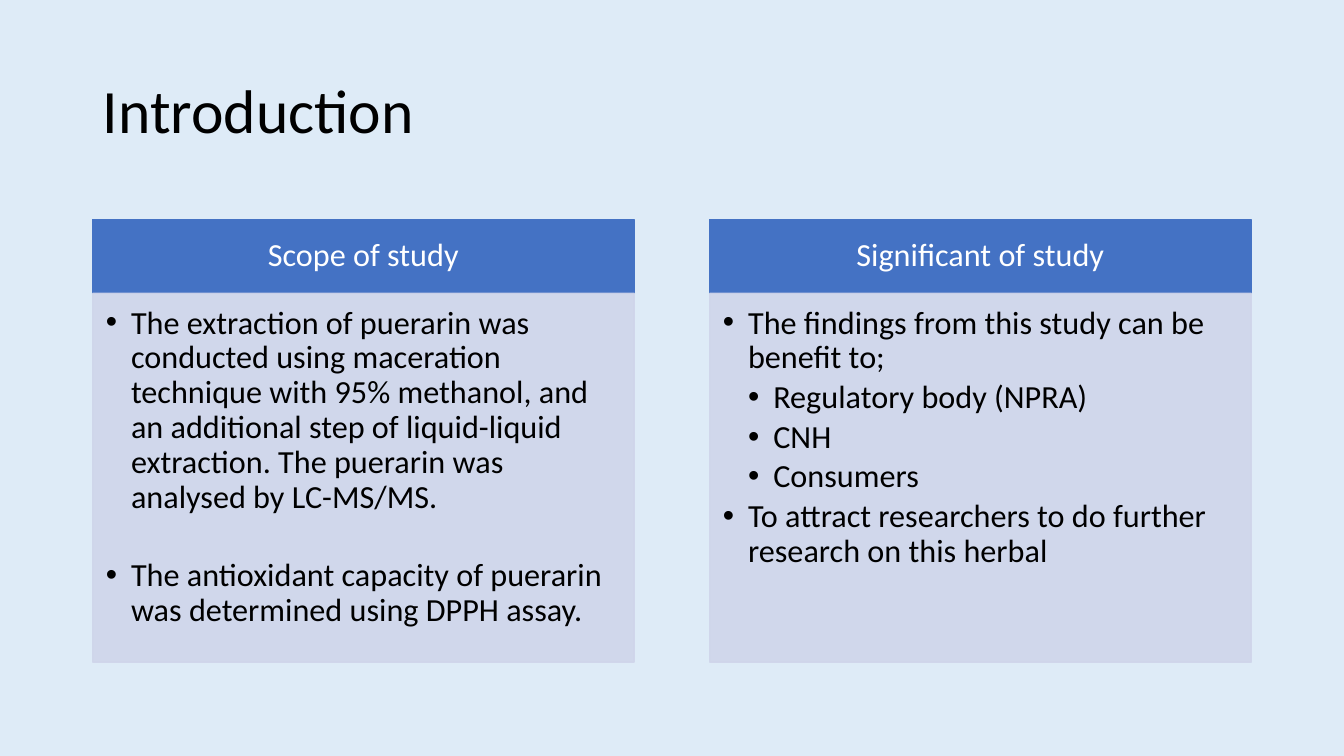
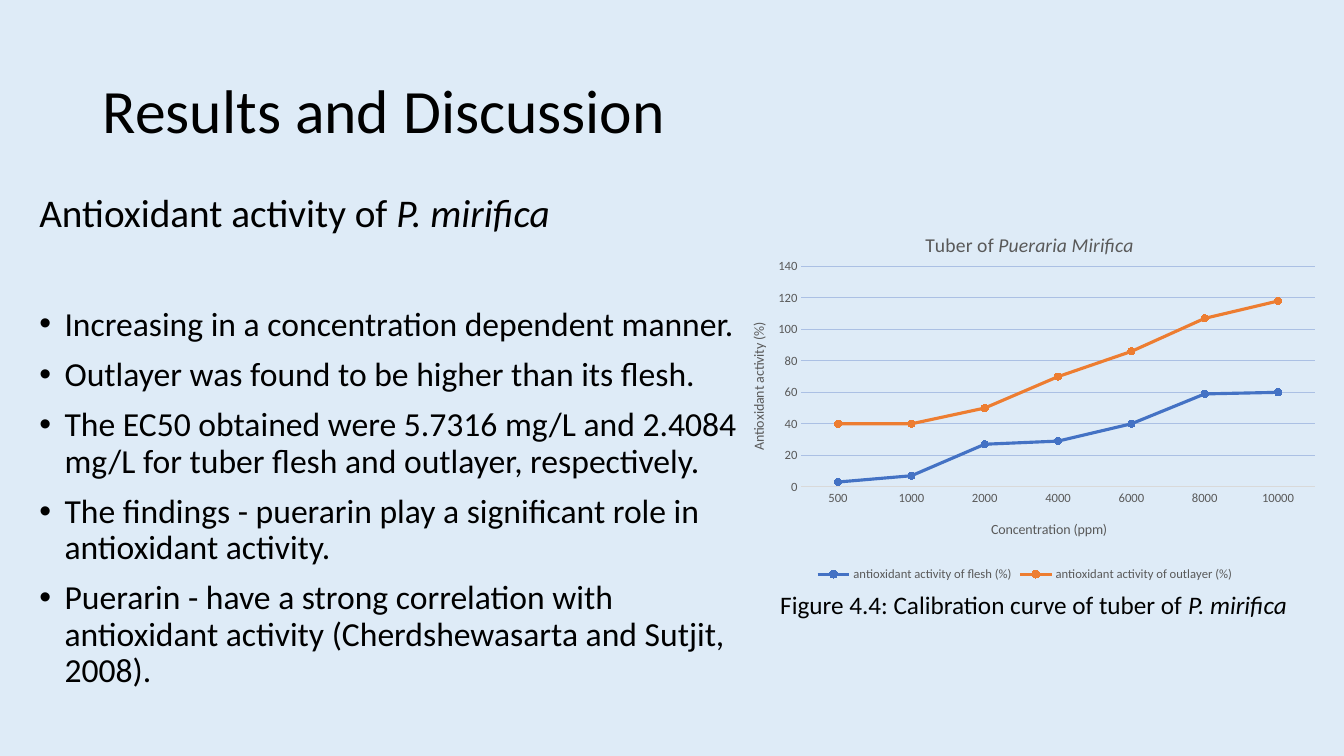
from dataclasses import dataclass

from lxml import etree
from pptx import Presentation
from pptx.chart.data import CategoryChartData
from pptx.dml.color import RGBColor
from pptx.enum.chart import XL_CHART_TYPE, XL_LEGEND_POSITION, XL_MARKER_STYLE, XL_TICK_MARK
from pptx.enum.shapes import MSO_SHAPE
from pptx.enum.text import MSO_ANCHOR, MSO_AUTO_SIZE, PP_ALIGN
from pptx.oxml.ns import qn
from pptx.util import Inches, Pt

LEFT, CENTER = PP_ALIGN.LEFT, PP_ALIGN.CENTER
TOP, MIDDLE = MSO_ANCHOR.TOP, MSO_ANCHOR.MIDDLE
RECT = MSO_SHAPE.RECTANGLE
LINES = XL_CHART_TYPE.LINE_MARKERS
BOTTOM = XL_LEGEND_POSITION.BOTTOM
CIRCLE = XL_MARKER_STYLE.CIRCLE
NO_TICK = XL_TICK_MARK.NONE
FIXED = MSO_AUTO_SIZE.NONE


@dataclass(frozen=True)
class Theme:
    font: str = "Calibri"
    ground: str = "DEEBF7"
    ink: str = "000000"
    white: str = "FFFFFF"
    blue: str = "4472C4"
    orange: str = "ED7D31"
    panel: str = "CFD5EA"
    gray: str = "595959"
    axis: str = "D9D9D9"
    grid: str = "ABC0E4"
    title: int = 44
    lead: int = 28
    list: int = 24
    card: int = 23
    note: int = 18
    chart: int = 14
    label: int = 10
    tick: int = 9
    leading: float = 0.9


T = Theme()

CARDS = [
    ("Scope of study", [
        (0, 0, "The extraction of puerarin was conducted using maceration technique "
               "with 95% methanol, and an additional step of liquid-liquid extraction. "
               "The puerarin was analysed by LC-MS/MS."),
        (0, 28, "The antioxidant capacity of puerarin was determined using DPPH assay."),
    ]),
    ("Significant of study", [
        (0, 0, "The findings from this study can be benefit to;"),
        (1, 0, "Regulatory body (NPRA)"),
        (1, 0, "CNH"),
        (1, 0, "Consumers"),
        (0, 0, "To attract researchers to do further research on this herbal"),
    ]),
]

POINTS = [
    "Increasing in a concentration dependent manner.",
    "Outlayer was found to be higher than its flesh.",
    "The EC50 obtained were 5.7316 mg/L and 2.4084 mg/L for tuber flesh and "
    "outlayer, respectively.",
    "The findings - puerarin play a significant role in antioxidant activity.",
    "Puerarin - have a strong correlation with antioxidant activity "
    "(Cherdshewasarta and Sutjit, 2008).",
]

DOSES = ["500", "1000", "2000", "4000", "6000", "8000", "10000"]
SERIES = [
    ("antioxidant activity of flesh (%)", T.blue, [3, 7, 27, 29, 40, 59, 60]),
    ("antioxidant activity of outlayer (%)", T.orange, [40, 40, 50, 70, 86, 107, 118]),
]


def rgb(code):
    return RGBColor.from_string(code)


def style(font, size, color):
    font.name, font.size, font.bold = T.font, Pt(size), False
    font.color.rgb = rgb(color)


def write(para, size, color, *parts):
    """Add one run per part; every second part is italic."""
    for i, part in enumerate(parts):
        run = para.add_run()
        run.text = part
        style(run.font, size, color)
        run.font.italic = i % 2 == 1


def space(para, before=0, after=0):
    para.line_spacing = T.leading
    para.space_before, para.space_after = Pt(before), Pt(after)


def bullet(para, level=0, mark="•"):
    """Set a hanging bullet, or none when mark is empty."""
    props = para._p.get_or_add_pPr()
    hang = Inches(0.25) if mark else 0
    props.set("marL", str(hang * (level + 1)))
    props.set("indent", str(-hang))
    if mark:
        etree.SubElement(props, qn("a:buFont")).set("typeface", "Arial")
        etree.SubElement(props, qn("a:buChar")).set("char", mark)
    else:
        etree.SubElement(props, qn("a:buNone"))


def put(shape, box):
    shape.left, shape.top, shape.width, shape.height = map(Inches, box)


def lines(frame):
    """Yield the first paragraph, then new ones."""
    yield frame.paragraphs[0]
    while True:
        yield frame.add_paragraph()


def heading(slide, text):
    shape = slide.shapes.title
    put(shape, (0.92, 0.4, 11.5, 1.45))
    frame = shape.text_frame
    frame.auto_size, frame.vertical_anchor = FIXED, MIDDLE
    para = frame.paragraphs[0]
    para.alignment = LEFT
    space(para)
    write(para, T.title, T.ink, text)


def block(slide, box, color, anchor, insets):
    shape = slide.shapes.add_shape(RECT, *map(Inches, box))
    shape.shadow.inherit = False
    shape.fill.solid()
    shape.fill.fore_color.rgb = rgb(color)
    shape.line.color.rgb = rgb(color)
    shape.line.width = Pt(1)
    frame = shape.text_frame
    frame.word_wrap, frame.vertical_anchor = True, anchor
    (frame.margin_left, frame.margin_top,
     frame.margin_right, frame.margin_bottom) = map(Inches, insets)
    return shape


def card(slide, box, title, items):
    x, y, w, h = box
    head = 0.73
    band = block(slide, (x, y, w, head), T.blue, MIDDLE, (0.18, 0.1, 0.18, 0.1))
    para = band.text_frame.paragraphs[0]
    para.alignment = CENTER
    space(para)
    write(para, T.card, T.white, title)

    panel = block(slide, (x, y + head, w, h - head), T.panel, TOP, (0.13, 0.13, 0.18, 0.2))
    for tint in panel._element.spPr.iter(qn("a:srgbClr")):
        etree.SubElement(tint, qn("a:alpha")).set("val", "90000")
    for para, (level, gap, text) in zip(lines(panel.text_frame), items_end(items)):
        para.level, para.alignment = level, LEFT
        space(para, gap, 3.5)
        bullet(para, level)
        write(para, T.card, T.ink, text)
    trim(panel.text_frame, len(items))


def items_end(items):
    return iter(items)


def trim(frame, count):
    """Drop paragraphs past the count."""
    for para in frame.paragraphs[count:]:
        para._p.getparent().remove(para._p)


def findings(slide, box):
    shape = slide.placeholders[1]
    put(shape, box)
    frame = shape.text_frame
    frame.auto_size = FIXED
    lead = frame.paragraphs[0]
    space(lead, 10)
    bullet(lead, mark="")
    write(lead, T.lead, T.ink, "Antioxidant activity of ", "P. mirifica")
    for i, text in enumerate(POINTS):
        para = frame.add_paragraph()
        space(para, 10 if i else 51)
        bullet(para)
        write(para, T.list, T.ink, text)


def layout(part, **sizes):
    """Fix a chart part at fractions of the chart's box."""
    node = part.find(qn("c:layout"))
    if node is None:
        node = etree.Element(qn("c:layout"))
        part.insert(0, node)
    fixed = etree.SubElement(node, qn("c:manualLayout"))
    if "w" in sizes:
        etree.SubElement(fixed, qn("c:layoutTarget")).set("val", "inner")
    for key in "xy":
        etree.SubElement(fixed, qn(f"c:{key}Mode")).set("val", "edge")
    for key, size in sizes.items():
        etree.SubElement(fixed, qn(f"c:{key}")).set("val", str(size))


def label(owner, title, x, y, size, *parts):
    owner.has_title = True
    write(title.text_frame.paragraphs[0], size, T.gray, *parts)
    layout(title._element, x=x, y=y)


def curve(slide, box):
    data = CategoryChartData()
    data.categories = DOSES
    for name, _, values in SERIES:
        data.add_series(name, values)
    chart = slide.shapes.add_chart(LINES, *map(Inches, box), data).chart
    style(chart.font, T.label, T.ink)
    label(chart, chart.chart_title, 0.33, 0.06, T.chart, "Tuber of ", "Pueraria Mirifica")

    across, up = chart.category_axis, chart.value_axis
    label(across, across.axis_title, 0.44, 0.82, T.label, "Concentration (ppm)")
    label(up, up.axis_title, 0.04, 0.3, T.label, "Antioxidant activity (%)")
    for axis in (across, up):
        axis.major_tick_mark = axis.minor_tick_mark = NO_TICK
        style(axis.tick_labels.font, T.tick, T.gray)
    across.format.line.color.rgb = rgb(T.axis)
    across.format.line.width = Pt(0.75)
    up.format.line.fill.background()
    up.minimum_scale, up.maximum_scale, up.major_unit = 0, 140, 20
    grid = up.major_gridlines.format.line
    grid.color.rgb, grid.width = rgb(T.grid), Pt(0.75)

    chart.has_legend = True
    chart.legend.position = BOTTOM
    chart.legend.include_in_layout = False
    style(chart.legend.font, T.tick, T.gray)

    plot = chart.plots[0]
    plot.vary_by_categories = False
    for line, (_, color, _) in zip(plot.series, SERIES):
        line.smooth = False
        line.format.line.color.rgb, line.format.line.width = rgb(color), Pt(2.25)
        mark = line.marker
        mark.style, mark.size = CIRCLE, 5
        mark.format.fill.solid()
        mark.format.fill.fore_color.rgb = rgb(color)
        mark.format.line.color.rgb = rgb(color)
    layout(chart._chartSpace.find(".//" + qn("c:plotArea")), x=0.13, y=0.16, w=0.85, h=0.58)


def caption(slide, box):
    frame = slide.shapes.add_textbox(*map(Inches, box)).text_frame
    frame.word_wrap = True
    write(frame.paragraphs[0], T.note, T.ink,
          "Figure 4.4: Calibration curve of tuber of ", "P. mirifica")


def intro(deck):
    slide = deck.slides.add_slide(deck.slide_layouts[5])
    heading(slide, "Introduction")
    for i, (title, items) in enumerate(CARDS):
        card(slide, (0.92 + i * 6.12, 2.18, 5.37, 4.39), title, items)


def results(deck):
    slide = deck.slides.add_slide(deck.slide_layouts[1])
    heading(slide, "Results and Discussion")
    findings(slide, (0.29, 1.87, 7.22, 5.32))
    curve(slide, (7.17, 2.04, 5.99, 3.77))
    caption(slide, (7.64, 5.8, 5.39, 0.4))


def main():
    deck = Presentation()
    deck.slide_width, deck.slide_height = Inches(13.33), Inches(7.5)
    ground = deck.slide_master.background.fill
    ground.solid()
    ground.fore_color.rgb = rgb(T.ground)
    intro(deck)
    results(deck)
    deck.save("out.pptx")


if __name__ == "__main__":
    main()
